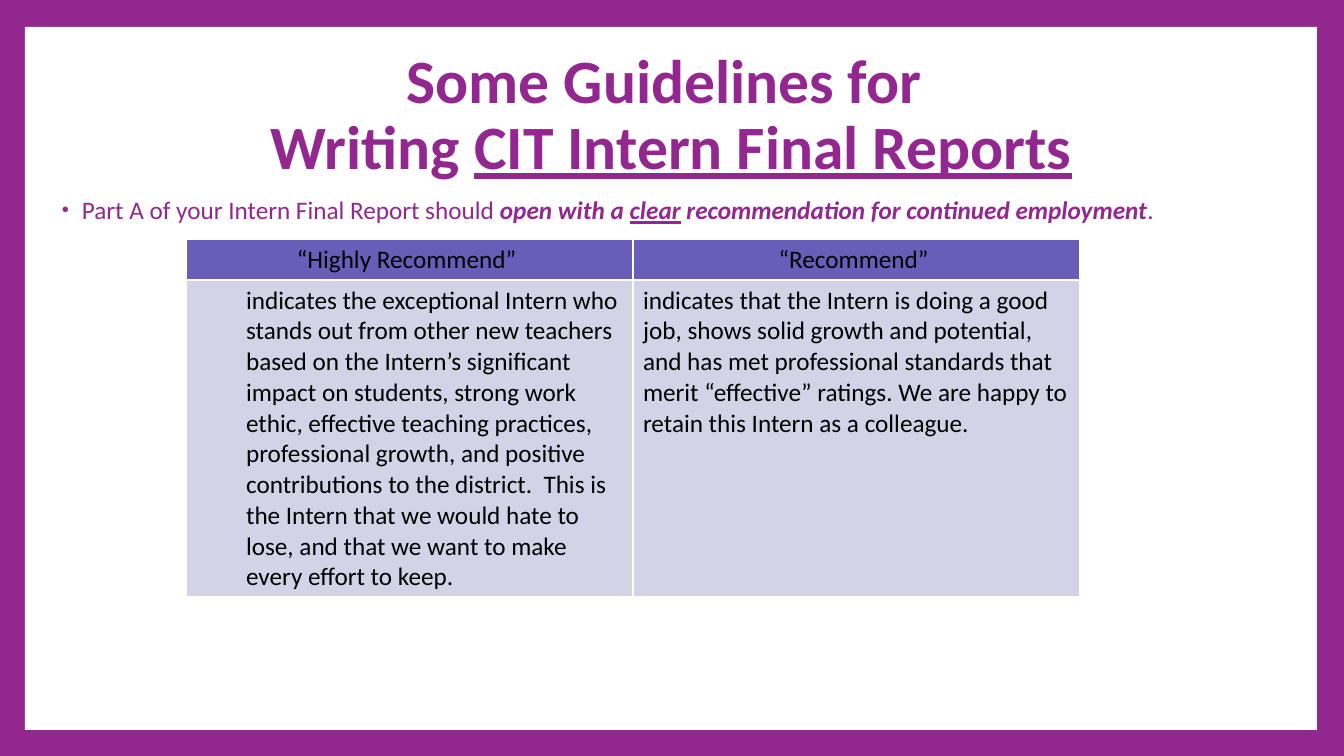
import pptx
import pptx.dml.color
import pptx.enum.shapes
import pptx.enum.text
import pptx.oxml
import pptx.oxml.ns
import pptx.util

ALIGN = pptx.enum.text.PP_ALIGN
ANCHOR = pptx.enum.text.MSO_ANCHOR
PURPLE, WHITE, BLACK = "92278F", "FFFFFF", "000000"
HEADER_FILL, BODY_FILL = "665EB8", "D3D2E6"


def px(length):
    return pptx.util.Emu(round(length * 12192000 / 1344))


def color(value):
    return pptx.dml.color.RGBColor.from_string(value)


def add_xml(parent, tag, attributes="", content=""):
    namespace = pptx.oxml.ns.nsdecls("a")
    parent.append(pptx.oxml.parse_xml(f"<a:{tag} {namespace} {attributes}>{content}</a:{tag}>"))


class SlideBuilder:
    """Draws styled elements on one slide, with lengths in px."""

    font = "Calibri"

    def __init__(self, slide):
        self.slide = slide

    def background(self, fill):
        self.slide.background.fill.solid()
        self.slide.background.fill.fore_color.rgb = color(fill)

    def panel(self, left, top, width, height, fill):
        shape = self.slide.shapes.add_shape(
            pptx.enum.shapes.MSO_SHAPE.RECTANGLE, px(left), px(top), px(width), px(height))
        shape.shadow.inherit = False
        shape.fill.solid()
        shape.fill.fore_color.rgb = color(fill)
        shape.line.fill.background()

    def fill_paragraph(self, paragraph, pieces, size, ink, align=ALIGN.LEFT):
        paragraph.alignment = align
        for index, (text, style) in enumerate(pieces):
            if index == 0:
                paragraph.text = text
                runs = paragraph.runs
            else:
                runs = [paragraph.add_run()]
                runs[0].text = text
            for run in runs:
                run.font.name = self.font
                run.font.size = pptx.util.Pt(size)
                run.font.color.rgb = color(ink)
                run.font.bold = "b" in style
                run.font.italic = "i" in style
                run.font.underline = "u" in style

    def text(self, left, top, width, height, pieces, size, ink,
             align=ALIGN.LEFT, anchor=ANCHOR.TOP):
        shape = self.slide.shapes.add_textbox(px(left), px(top), px(width), px(height))
        shape.text_frame.word_wrap = True
        shape.text_frame.vertical_anchor = anchor
        paragraph = shape.text_frame.paragraphs[0]
        self.fill_paragraph(paragraph, pieces, size, ink, align)
        paragraph.line_spacing = 0.9
        return paragraph

    def indent(self, paragraph, left, first=0):
        properties = paragraph._p.get_or_add_pPr()
        properties.set("marL", str(px(left)))
        properties.set("indent", str(px(first)))
        return properties

    def bullet(self, paragraph, ink):
        properties = self.indent(paragraph, 25, -20)
        add_xml(properties, "buClr", content=f'<a:srgbClr val="{ink}"/>')
        add_xml(properties, "buSzPct", 'val="80000"')
        add_xml(properties, "buFont", 'typeface="Arial"')
        add_xml(properties, "buChar", 'char="•"')

    def cell(self, cell, text, fill, align):
        paragraph = cell.text_frame.paragraphs[0]
        self.fill_paragraph(paragraph, [(text, "")], 18, BLACK, align)
        properties = cell._tc.get_or_add_tcPr()
        for side in ("lnL", "lnR", "lnT", "lnB"):
            add_xml(properties, side, f'w="{pptx.util.Pt(1)}"',
                    f'<a:solidFill><a:srgbClr val="{WHITE}"/></a:solidFill>')
        cell.fill.solid()
        cell.fill.fore_color.rgb = color(fill)

    def table(self, left, top, column_width, row_heights, rows):
        columns = len(rows[0])
        table = self.slide.shapes.add_table(
            len(rows), columns, px(left), px(top),
            px(column_width * columns), px(sum(row_heights))).table
        table.first_row = table.horz_banding = False
        for column in table.columns:
            column.width = px(column_width)
        for row_index, texts in enumerate(rows):
            table.rows[row_index].height = px(row_heights[row_index])
            fill, align = (BODY_FILL, ALIGN.LEFT) if row_index else (HEADER_FILL, ALIGN.CENTER)
            for column_index, text in enumerate(texts):
                self.cell(table.cell(row_index, column_index), text, fill, align)
        return table


def main():
    presentation = pptx.Presentation()
    presentation.slide_width, presentation.slide_height = px(1344), px(756)
    builder = SlideBuilder(presentation.slides.add_slide(presentation.slide_layouts[6]))
    builder.background(PURPLE)
    builder.panel(25, 27, 1292, 703, WHITE)
    builder.text(127, 42, 1089, 149, [
        ("Some Guidelines for \vWriting ", "b"),
        ("CIT Intern Final Reports", "bu"),
    ], 44, PURPLE, ALIGN.CENTER, ANCHOR.MIDDLE)
    advice = builder.text(47, 193, 1249, 497, [
        ("Part A of your Intern Final Report should ", ""),
        ("open with a ", "bi"),
        ("clear", "biu"),
        (" recommendation for continued employment", "bi"),
        (".", ""),
    ], 18, PURPLE)
    builder.bullet(advice, PURPLE)
    ratings = builder.table(186, 239, 447, [41, 317], [
        ["“Highly Recommend” ", "“Recommend” "],
        ["indicates the exceptional Intern who stands out from other new teachers based on "
         "the Intern’s significant impact on students, strong work ethic, effective teaching "
         "practices, professional growth, and positive contributions to the district.  This is "
         "the Intern that we would hate to lose, and that we want to make every effort to keep.",
         "indicates that the Intern is doing a good job, shows solid growth and potential, and "
         "has met professional standards that merit “effective” ratings. We are happy to retain "
         "this Intern as a colleague."],
    ])
    builder.indent(ratings.cell(1, 0).text_frame.paragraphs[0], 50)
    presentation.save("out.pptx")


if __name__ == "__main__":
    main()
